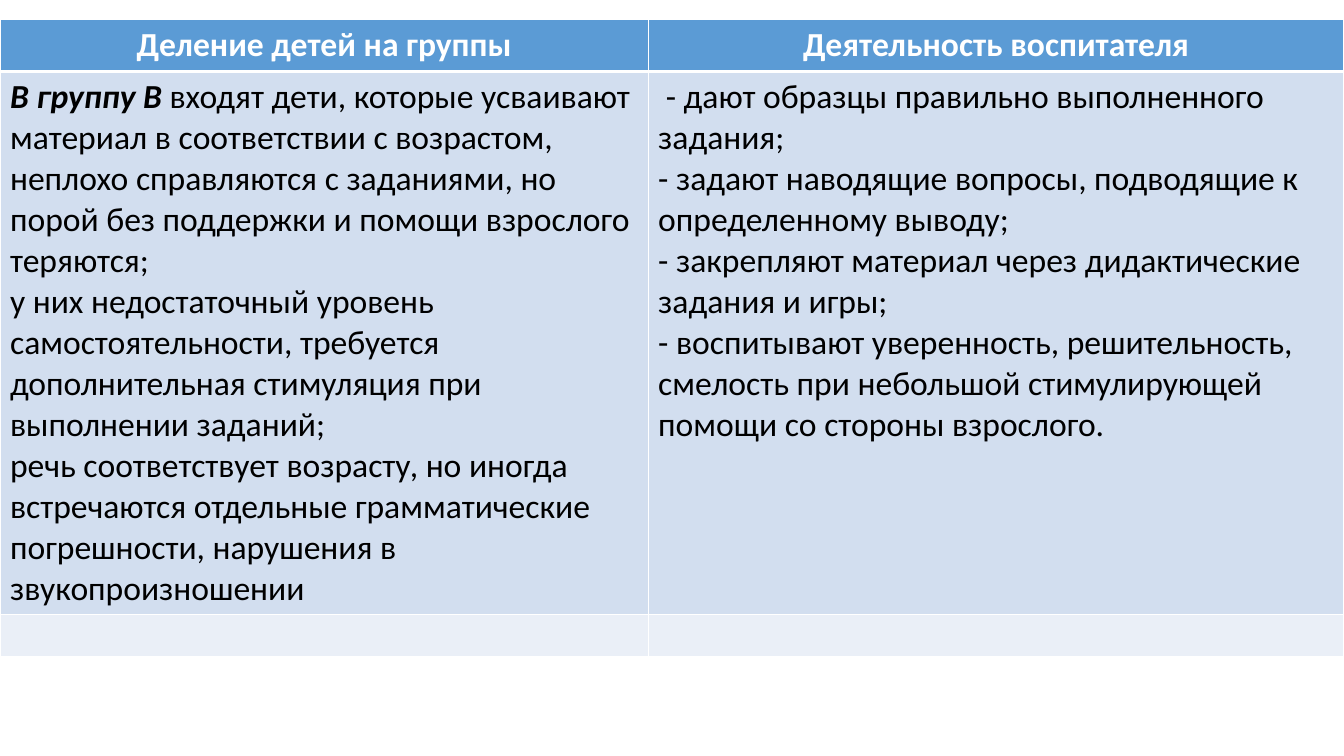
import pptx
import pptx.util
import pptx.dml.color
import pptx.enum.text
import pptx.oxml
import pptx.oxml.ns

Pt = pptx.util.Pt
COLORS = {"head": "5B9BD5", "body": "D2DEEF", "last": "EAEFF7",
          "white": "FFFFFF", "text": "000000"}
HEADS = ["Деление детей на группы", "Деятельность воспитателя"]
LEAD = "В группу В"
BODIES = [
    [" входят дети, которые усваивают материал в соответствии с возрастом, "
     "неплохо справляются с заданиями, но порой без поддержки и помощи взрослого теряются;",
     "у них недостаточный уровень самостоятельности, требуется дополнительная "
     "стимуляция при выполнении заданий;",
     "речь соответствует возрасту, но иногда встречаются отдельные грамматические "
     "погрешности, нарушения в звукопроизношении"],
    [" - дают образцы правильно выполненного задания;",
     "- задают наводящие вопросы, подводящие к определенному выводу;",
     "- закрепляют материал через дидактические задания и игры;",
     "- воспитывают уверенность, решительность, смелость при небольшой "
     "стимулирующей помощи со стороны взрослого."],
]
WIDTHS = [463, 497]
ROWS = [("head", 37.4), ("body", 366), ("last", 30)]


def rgb(name):
    return pptx.dml.color.RGBColor.from_string(COLORS[name])


def edge(cell, side, width):
    """Add a white border to one side (L, R, T or B); call in that order."""
    line = pptx.oxml.parse_xml(
        f'<a:ln{side} {pptx.oxml.ns.nsdecls("a")} w="{Pt(width)}"><a:solidFill>'
        f'<a:srgbClr val="{COLORS["white"]}"/></a:solidFill></a:ln{side}>')
    cell._tc.get_or_add_tcPr().append(line)


deck = pptx.Presentation()
deck.slide_width, deck.slide_height = Pt(960), Pt(540)
slide = deck.slides.add_slide(deck.slide_layouts[6])
frame = slide.shapes.add_table(len(ROWS), len(WIDTHS), Pt(0), Pt(13.7),
                               Pt(sum(WIDTHS)), Pt(sum(high for _, high in ROWS)))
table = frame.table
for col, width in zip(table.columns, WIDTHS):
    col.width = Pt(width)

for r, (kind, high) in enumerate(ROWS):
    table.rows[r].height = Pt(high)
    for c in range(len(WIDTHS)):
        cell = table.cell(r, c)
        for side in "LRTB":
            thick = (kind, side) in [("head", "B"), ("body", "T")]
            edge(cell, side, 3 if thick else 1)
        cell.fill.solid()
        cell.fill.fore_color.rgb = rgb(kind)
        if kind == "last":
            continue
        head = kind == "head"
        lines = [HEADS[c]] if head else BODIES[c]
        text = cell.text_frame
        for i, line in enumerate(lines):
            para = text.paragraphs[0] if i == 0 else text.add_paragraph()
            if not head and c == 0 and i == 0:
                lead = para.add_run()
                lead.text = LEAD
                lead.font.bold = lead.font.italic = True
            para.add_run().text = line
            para.font.name = "Calibri"
            para.font.size = Pt(24)
            para.font.bold = head
            para.font.color.rgb = rgb("white" if head else "text")
            if head:
                para.alignment = pptx.enum.text.PP_ALIGN.CENTER

deck.save("out.pptx")
